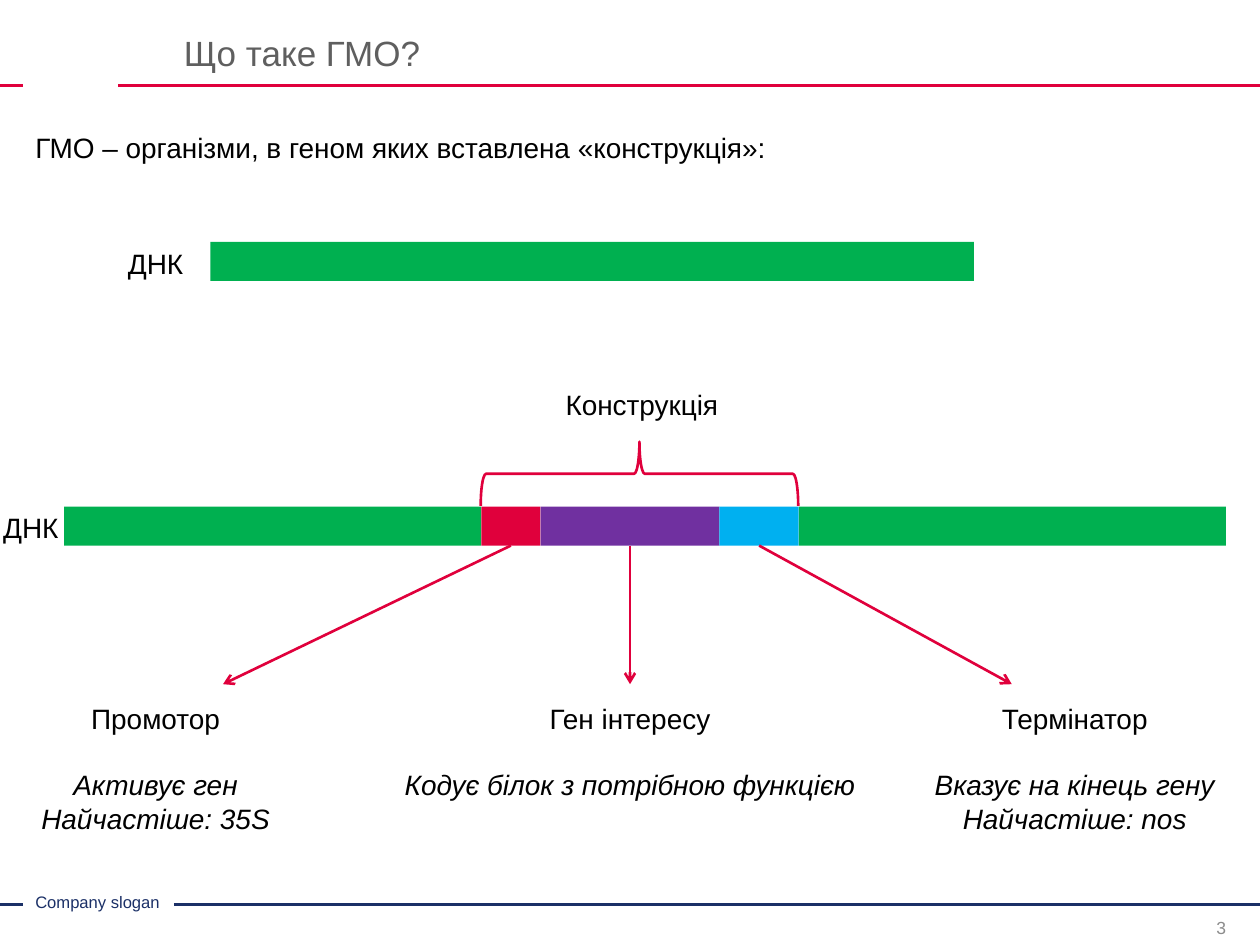
from dataclasses import dataclass

from lxml import etree
from pptx import Presentation, util as u
from pptx.dml.color import RGBColor
from pptx.enum import shapes, text
from pptx.oxml.ns import qn
from pptx.slide import Slide

RED = RGBColor(0xE0, 0x00, 0x3C)
NAVY = RGBColor(0x1B, 0x30, 0x67)
GREEN = RGBColor(0x00, 0xB0, 0x50)
VIOLET = RGBColor(0x70, 0x30, 0xA0)
BLUE = RGBColor(0x00, 0xB0, 0xF0)
BLACK = RGBColor(0x00, 0x00, 0x00)
GRAY = RGBColor(0x5F, 0x5F, 0x5F)
PALE = RGBColor(0x8C, 0x8C, 0x8C)

FONT = "Arial"
LEFT = text.PP_ALIGN.LEFT
MID = text.PP_ALIGN.CENTER
RIGHT = text.PP_ALIGN.RIGHT
TOP = text.MSO_ANCHOR.TOP
CORE = text.MSO_ANCHOR.MIDDLE
BAR = 0.31  # height of every DNA bar
GENE = 4.02  # top of the modified DNA
TIP = 5.43  # where the arrows end


@dataclass
class Box:
    x: float
    y: float
    w: float
    h: float


@dataclass
class Row:
    words: str
    size: float = 16
    color: RGBColor = BLACK
    italic: bool = False
    gap: float = 0
    lead: float = 1


@dataclass
class Part:
    """One stretch of the modified DNA, with its arrow and caption."""
    w: float
    color: RGBColor
    tip: float = 0
    note: Box | None = None
    name: str = ""
    facts: tuple[str, ...] = ()


def add_text(slide: Slide, box: Box, rows: list[Row], align=LEFT,
             anchor=TOP, wrap: bool = True) -> None:
    shape = slide.shapes.add_textbox(*map(u.Inches, (box.x, box.y, box.w, box.h)))
    frame = shape.text_frame
    frame.word_wrap = wrap
    frame.vertical_anchor = anchor
    frame.margin_left = frame.margin_right = 0
    frame.margin_top = frame.margin_bottom = 0
    for i, row in enumerate(rows):
        para = frame.add_paragraph() if i else frame.paragraphs[0]
        para.alignment = align
        para.line_spacing = row.lead
        para.space_before = u.Pt(row.gap)
        run = para.add_run()
        run.text = row.words
        run.font.name = FONT
        run.font.size = u.Pt(row.size)
        run.font.italic = row.italic
        run.font.color.rgb = row.color


def add_bar(slide: Slide, x: float, y: float, w: float, color: RGBColor) -> None:
    bar = slide.shapes.add_shape(
        shapes.MSO_SHAPE.RECTANGLE, *map(u.Inches, (x, y, w, BAR)))
    bar.shadow.inherit = False
    bar.fill.solid()
    bar.fill.fore_color.rgb = color
    bar.line.fill.background()


def add_line(slide: Slide, x1: float, y1: float, x2: float, y2: float,
             color: RGBColor = RED, arrow: bool = False) -> None:
    line = slide.shapes.add_connector(
        shapes.MSO_CONNECTOR.STRAIGHT, *map(u.Inches, (x1, y1, x2, y2)))
    line.line.color.rgb = color
    line.line.width = u.Pt(1.5)
    if arrow:
        etree.SubElement(line.line._get_or_add_ln(), qn("a:tailEnd"), type="arrow")
    etree.SubElement(line._element.spPr, qn("a:effectLst"))


def add_brace(slide: Slide, box: Box) -> None:
    brace = slide.shapes.add_shape(
        shapes.MSO_SHAPE.RIGHT_BRACE, *map(u.Inches, (box.x, box.y, box.w, box.h)))
    brace.rotation = 270
    brace.shadow.inherit = False
    brace.fill.background()
    brace.line.color.rgb = RED
    brace.line.width = u.Pt(1.5)


def add_gene(slide: Slide, parts: list[Part]) -> None:
    x = 0.51
    for part in parts:
        add_bar(slide, x, GENE, part.w, part.color)
        if part.note:
            add_line(slide, x + part.w / 2, GENE + BAR, part.tip, TIP, arrow=True)
            facts = [Row(fact, italic=True, gap=0 if i else 18.4)
                     for i, fact in enumerate(part.facts)]
            add_text(slide, part.note, [Row(part.name), *facts], MID, wrap=False)
        x += part.w


PARTS = [
    Part(3.31, GREEN),
    Part(0.47, RED, 1.77, Box(0.32, 5.57, 1.83, 1.08), "Промотор",
         ("Активує ген", "Найчастіше: 35S")),
    Part(1.42, VIOLET, 5, Box(3.19, 5.57, 3.62, 1.08), "Ген інтересу",
         ("Кодує білок з потрібною функцією",)),
    Part(0.63, BLUE, 8.03, Box(7.41, 5.57, 2.24, 1.08), "Термінатор",
         ("Вказує на кінець гену", "Найчастіше: nos")),
    Part(3.39, GREEN),
]

LABELS = [
    ("Конструкція", Box(4.48, 3.08, 1.23, 0.27)),
    ("ДНК", Box(1.01, 1.96, 0.45, 0.27)),
    ("ДНК", Box(0.02, 4.05, 0.45, 0.27)),
]


def main() -> None:
    deck = Presentation()
    deck.slide_width, deck.slide_height = u.Inches(10), u.Inches(7.5)
    slide = deck.slides.add_slide(deck.slide_layouts[6])

    # Header and footer rules, each broken by a gap
    for y, color, start in ((0.68, RED, 0.94), (7.18, NAVY, 1.38)):
        add_line(slide, 0, y, 0.18, y, color)
        add_line(slide, start, y, 10, y, color)

    # Title, footer and opening sentence
    add_text(slide, Box(0.28, 7.06, 1.02, 0.2),
             [Row("Company slogan", 9.5, NAVY)], anchor=CORE, wrap=False)
    add_text(slide, Box(1.46, 0.28, 8.27, 0.32),
             [Row("Що таке ГМО?", 20, GRAY, lead=0.9)], anchor=CORE)
    add_text(slide, Box(9.3, 7.24, 0.43, 0.24), [Row("3", 10, PALE)], RIGHT, CORE)
    add_text(slide, Box(0.28, 1.07, 9.45, 0.31),
             [Row("ГМО – організми, в геном яких вставлена «конструкція»:", lead=0.9)])

    # Plain DNA, then DNA with the construct
    add_bar(slide, 1.67, 1.92, 6.06, GREEN)
    add_gene(slide, PARTS)
    add_brace(slide, Box(4.82, 2.5, 0.51, 2.52))
    for words, box in LABELS:
        add_text(slide, box, [Row(words)], MID, wrap=False)

    deck.save("out.pptx")


if __name__ == "__main__":
    main()
